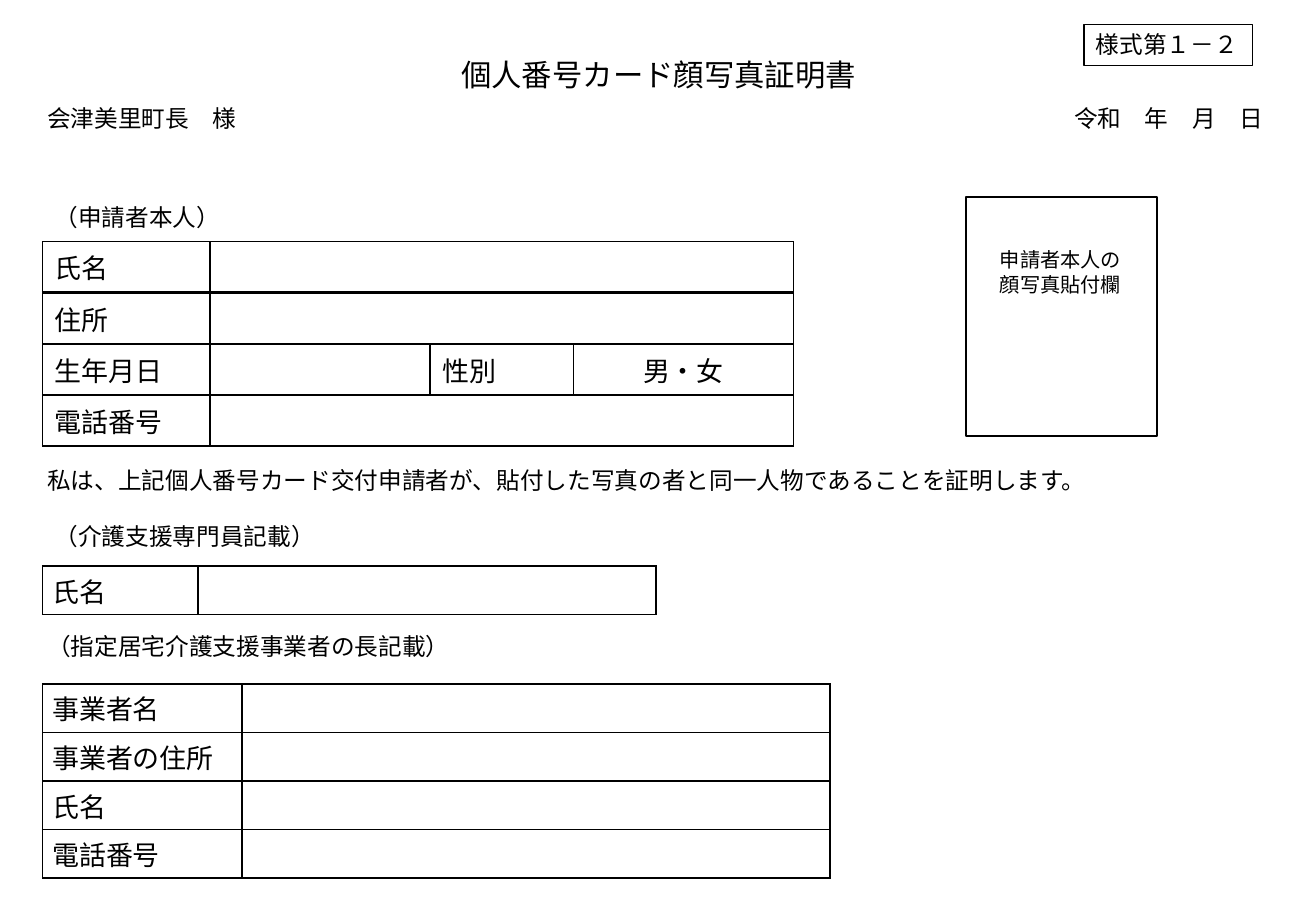
from lxml import etree
from pptx import Presentation
from pptx import util as u
from pptx.dml.color import RGBColor
from pptx.enum import shapes, text
from pptx.oxml import ns

# Content: lengths in px, 200 px to the inch
PX = 4572
FONT = "Noto Sans CJK JP"
INK, PAPER = "000000", "FFFFFF"
MID = text.PP_ALIGN.CENTER

LABELS = [  # text, left, top, width, height, format
    ("個人番号カード顔写真証明書", 730, 82, 708, 80, dict(size=18, align=MID)),
    ("会津美里町長　様", 58, 162, 708, 68, {}),
    ("令和　年　月　日", 1748, 162, 382, 68, {}),
    ("（申請者本人）", 70, 324, 1234, 68, {}),
    ("申請者本人の\n顔写真貼付欄", 1626, 398, 244, 100, dict(size=12)),
    ("私は、上記個人番号カード交付申請者が、貼付した写真の者と同一人物であることを証明します。",
     58, 758, 1812, 114, {}),
    ("（介護支援専門員記載）", 70, 850, 1002, 68, {}),
    ("（指定居宅介護支援事業者の長記載）", 58, 1030, 1234, 68, {}),
]
BOXES = [  # text, left, top, width, height, line weight
    ("", 1590, 324, 314, 394, 1),
    ("様式第１－２", 1784, 40, 278, 68, 0.75),
]
TABLES = [  # top, column widths, row height, inset (x, y), rows, row above a thick rule
    (398, [276, 362, 236, 362], 81, (20, 10),
     [["氏名"], ["住所"], ["生年月日", "", "性別", "男・女"], ["電話番号"]], 0),
    (932, [256, 754], 69, (16, 8), [["氏名"]], None),
    (1126, [328, 968], 69, (16, 8),
     [["事業者名"], ["事業者の住所"], ["氏名"], ["電話番号"]], None),
]
LEFT = 70


def px(*vals):
    return [u.Emu(v * PX) for v in vals]


def rgb(code):
    return RGBColor.from_string(code)


def write(frame, words, size=14, align=None, color=INK):
    frame.word_wrap = True
    frame.vertical_anchor = text.MSO_ANCHOR.TOP
    for i, line in enumerate(words.split("\n")):
        para = frame.add_paragraph() if i else frame.paragraphs[0]
        para.alignment = align or text.PP_ALIGN.LEFT
        run = para.add_run()
        run.text = line
        font = run.font
        font.size, font.name = u.Pt(size), FONT
        font.color.rgb = rgb(color)
        etree.SubElement(font._element, ns.qn("a:ea"), typeface=FONT)


def rule(cell, side, pt):
    line = etree.SubElement(cell._tc.get_or_add_tcPr(), ns.qn("a:ln" + side),
                            w=str(u.Pt(pt)))
    fill = etree.SubElement(line, ns.qn("a:solidFill"))
    etree.SubElement(fill, ns.qn("a:srgbClr"), val=INK)


def grid(slide, top, cols, high, inset, rows, thick):
    frame = slide.shapes.add_table(
        len(rows), len(cols), *px(LEFT, top, sum(cols), high * len(rows)))
    table = frame.table
    table.first_row = table.horz_banding = False
    for col, wide in zip(table.columns, cols):
        col.width = u.Emu(wide * PX)
    for r, row in enumerate(rows):
        table.rows[r].height = u.Emu(high * PX)
        for c in range(len(cols)):
            cell = table.cell(r, c)
            cell.margin_left = cell.margin_right = u.Emu(inset[0] * PX)
            cell.margin_top = cell.margin_bottom = u.Emu(inset[1] * PX)
            for side in "LRTB":
                heavy = thick is not None and (side, r) in (
                    ("B", thick), ("T", thick + 1))
                rule(cell, side, 2 if heavy else 1)
            cell.fill.solid()
            cell.fill.fore_color.rgb = rgb(PAPER)
            words = row[c] if c < len(row) else ""
            if words:
                write(cell.text_frame, words, size=16,
                      align=MID if c == 3 else None)
            else:  # keep empty cells from stretching the row
                para = cell.text_frame.paragraphs[0]._p
                etree.SubElement(para, ns.qn("a:endParaRPr"), sz="1600")
        if len(row) == 1 and len(cols) > 2:
            table.cell(r, 1).merge(table.cell(r, len(cols) - 1))


def main():
    deck = Presentation()
    deck.slide_width, deck.slide_height = px(2166, 1500)
    slide = deck.slides.add_slide(deck.slide_layouts[6])

    # Form tables
    for spec in TABLES:
        grid(slide, *spec)

    # Photo space and form number
    for words, *place, weight in BOXES:
        box = slide.shapes.add_shape(shapes.MSO_SHAPE.RECTANGLE, *px(*place))
        box.shadow.inherit = False
        box.fill.background()
        box.line.color.rgb = rgb(INK)
        box.line.width = u.Pt(weight)
        if words:
            write(box.text_frame, words)

    # Headings and statements
    for words, *place, style in LABELS:
        label = slide.shapes.add_textbox(*px(*place))
        write(label.text_frame, words, **style)

    deck.save("out.pptx")


if __name__ == "__main__":
    main()
